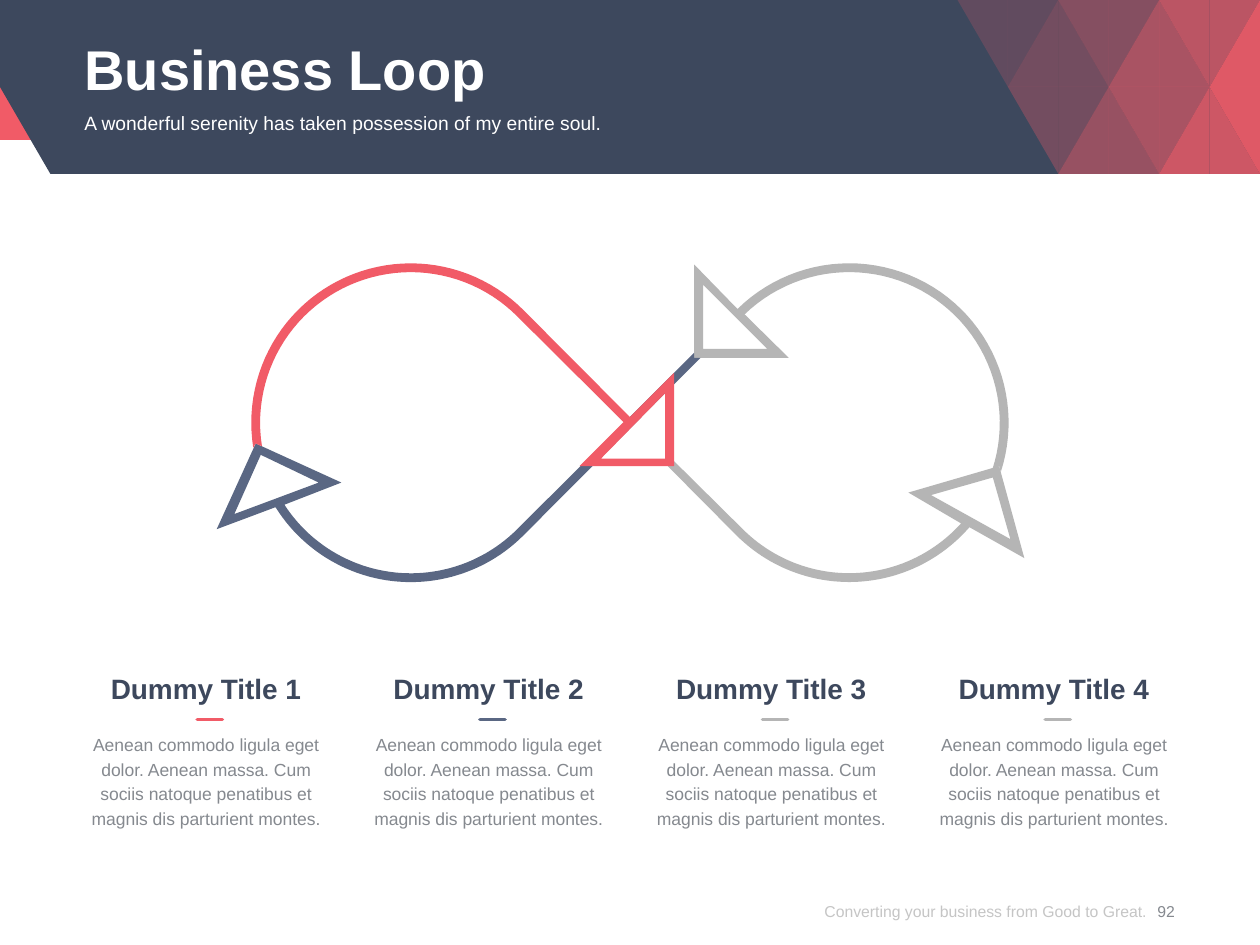
from dataclasses import dataclass
from math import cos, radians, sin

from lxml import etree
from pptx import Presentation
from pptx.dml.color import RGBColor
from pptx.enum.shapes import MSO_CONNECTOR, MSO_SHAPE
from pptx.enum.text import MSO_ANCHOR, MSO_AUTO_SIZE, PP_ALIGN
from pptx.oxml.ns import qn
from pptx.util import Inches, Pt

LEFT, CENTER, RIGHT = PP_ALIGN.LEFT, PP_ALIGN.CENTER, PP_ALIGN.RIGHT
TOP, MIDDLE = MSO_ANCHOR.TOP, MSO_ANCHOR.MIDDLE
NO_AUTOFIT = MSO_AUTO_SIZE.NONE
RECTANGLE, STRAIGHT = MSO_SHAPE.RECTANGLE, MSO_CONNECTOR.STRAIGHT

DESCRIPTION = (
    "Aenean commodo ligula eget dolor. Aenean massa. "
    "Cum sociis natoque penatibus et magnis dis parturient montes."
)
BAND_MIDDLE, BAND_BOTTOM = 0.69, 1.38
OUTER, INNER = 1.265, 1.195
LEFT_RING, RIGHT_RING = (3.26, 3.355), (6.74, 3.355)


@dataclass(frozen=True)
class Theme:
    font: str = "Arial"
    red: str = "F15B67"
    navy: str = "3D485D"
    blue: str = "5A6783"
    silver: str = "B5B5B5"
    gray: str = "85898F"
    footer: str = "8C8C8C"
    white: str = "FFFFFF"
    title_size: int = 32
    heading_size: int = 16
    subtitle_size: int = 11
    body_size: int = 10
    footer_size: int = 9


def set_alpha(fill, percent):
    for color in fill._xPr.iter(qn("a:srgbClr")):
        etree.SubElement(color, qn("a:alpha"), val=str(percent * 1000))


def arc(center, radius, start, end, steps=48):
    """Return points along a circle, with angles in degrees clockwise from the right."""
    angles = [radians(start + (end - start) * step / steps) for step in range(steps + 1)]
    return [(center[0] + radius * cos(angle), center[1] + radius * sin(angle)) for angle in angles]


def write(frame, text, *, size, color, font, bold=False, align=LEFT, anchor=TOP,
          line_spacing=None, alpha=None):
    frame.margin_left = frame.margin_right = frame.margin_top = frame.margin_bottom = 0
    frame.word_wrap = True
    frame.auto_size = NO_AUTOFIT
    frame.vertical_anchor = anchor
    paragraph = frame.paragraphs[0]
    paragraph.alignment = align
    paragraph.space_before = Pt(0)
    if line_spacing:
        paragraph.line_spacing = Pt(line_spacing)
    run = paragraph.add_run()
    run.text = text
    run.font.name, run.font.size, run.font.bold = font, Pt(size), bold
    run.font.fill.solid()
    run.font.fill.fore_color.rgb = RGBColor.from_string(color)
    if alpha:
        set_alpha(run.font.fill, alpha)


class SlideBuilder:
    """Draws themed elements on the current slide."""

    def __init__(self, slide, theme):
        self.slide, self.shapes, self.theme = slide, slide.shapes, theme

    def paint(self, shape, color, alpha=None):
        shape.shadow.inherit = False
        shape.line.fill.background()
        shape.fill.solid()
        shape.fill.fore_color.rgb = RGBColor.from_string(color)
        if alpha:
            set_alpha(shape.fill, alpha)

    def rectangle(self, left, top, width, height, color):
        shape = self.shapes.add_shape(
            RECTANGLE, Inches(left), Inches(top), Inches(width), Inches(height))
        self.paint(shape, color)

    def outline(self, color, *contours, alpha=None):
        builder = None
        for contour in contours:
            start, *others = [(Inches(x), Inches(y)) for x, y in contour]
            if builder is None:
                builder = self.shapes.build_freeform(*start)
            else:
                builder.move_to(*start)
            builder.add_line_segments(others)
        self.paint(builder.convert_to_shape(), color, alpha)

    def rule(self, left, top, right, color):
        line = self.shapes.add_connector(
            STRAIGHT, Inches(left), Inches(top), Inches(right), Inches(top))
        line.line.width = Pt(2)
        line.line.color.rgb = RGBColor.from_string(color)
        line.line._get_or_add_ln().set("cap", "rnd")
        etree.SubElement(line._element.spPr, qn("a:effectLst"))

    def text(self, text, left, top, width, height, **style):
        box = self.shapes.add_textbox(Inches(left), Inches(top), Inches(width), Inches(height))
        write(box.text_frame, text, font=self.theme.font, **style)

    def placeholder(self, index, text, left, top, width, height, **style):
        shape = self.slide.placeholders[index]
        shape.left, shape.top = Inches(left), Inches(top)
        shape.width, shape.height = Inches(width), Inches(height)
        write(shape.text_frame, text, font=self.theme.font, **style)
        properties = shape.text_frame.paragraphs[0]._p.get_or_add_pPr()
        properties.set("marL", "0")
        properties.set("indent", "0")
        etree.SubElement(properties, qn("a:buNone"))
        self.shapes._spTree.append(shape._element)


def draw_header(builder):
    theme = builder.theme
    builder.rectangle(0, 0, 10, 1.11, theme.red)
    builder.outline(theme.navy, [
        (0, 0), (10, 0), (10, BAND_BOTTOM), (0.4, BAND_BOTTOM), (0, BAND_MIDDLE)])
    half = 0.4
    rows = ((0, 1, (20, 30, 40, 60, 70, 90)), (BAND_BOTTOM, 2, (30, 50, 60, 80, 90)))
    for edge, first, alphas in rows:
        for column, alpha in enumerate(alphas, first):
            center = 10 - half * (6 - column)
            apex, base = (BAND_MIDDLE, edge) if column % 2 else (edge, BAND_MIDDLE)
            for side in (-half, half):
                if center + side <= 10:
                    builder.outline(
                        theme.red, [(center, apex), (center, base), (center + side, base)],
                        alpha=alpha)
    builder.placeholder(0, "Business Loop", 0.67, 0.19, 8.66, 0.65, size=theme.title_size,
                        color=theme.white, bold=True, anchor=MIDDLE, line_spacing=42)
    builder.placeholder(1, "A wonderful serenity has taken possession of my entire soul.",
                        0.67, 0.88, 8.66, 0.39, size=theme.subtitle_size, color=theme.white)


def draw_loop(builder):
    theme = builder.theme
    builder.outline(
        theme.silver,
        [(7.93, 3.7), (7.21, 3.91), *arc(RIGHT_RING, INNER, 42, 135), (5.35, 3.66), (5.35, 3.7),
         (5.3, 3.7), *arc(RIGHT_RING, OUTER, 135, 41), (8.13, 4.43)],
        [(7.39, 3.93), (7.88, 3.79), (8.02, 4.28)])
    builder.outline(
        theme.silver,
        [*arc(RIGHT_RING, OUTER, 18, -134.5), (5.51, 2.1), (5.51, 2.84), (6.26, 2.84),
         *arc(RIGHT_RING, INNER, -134, 18), (7.93, 3.7)],
        [(6.09, 2.77), (5.58, 2.77), (5.58, 2.26)])
    builder.outline(
        theme.blue,
        [(5.51, 2.84), (5.51, 2.8), *arc(LEFT_RING, INNER, 45, 147), (2.71, 3.83), (2.03, 3.52),
         (1.72, 4.2), *arc(LEFT_RING, OUTER, 148, 45), (5.56, 2.84)],
        [(1.86, 4.08), (2.07, 3.61), (2.53, 3.83)])
    builder.outline(
        theme.red,
        [(5, 3.31), *arc(LEFT_RING, OUTER, -45, -189), (2.03, 3.52),
         *arc(LEFT_RING, INNER, -189, -45), (4.95, 3.35), (4.6, 3.7), (5.35, 3.7), (5.35, 2.96)],
        [(5.28, 3.64), (4.77, 3.64), (5.28, 3.12)])


def draw_columns(builder):
    theme = builder.theme
    width = 1.93
    pitch = (8.66 - width) / 3
    for index, color in enumerate((theme.red, theme.blue, theme.silver, theme.silver)):
        left = 0.67 + index * pitch
        center = left + width / 2 + 0.03
        builder.text(f"Dummy Title {index + 1}", left, 5.33, width, 0.27,
                     size=theme.heading_size, color=theme.navy, bold=True, align=CENTER)
        builder.rule(center - 0.1, 5.71, center + 0.1, color)
        builder.text(DESCRIPTION, left, 5.8, width, 0.79, size=theme.body_size,
                     color=theme.gray, align=CENTER, line_spacing=14)


def draw_footer(builder):
    theme = builder.theme
    builder.text("Converting your business from Good to Great.", 6.04, 6.96, 3.06, 0.54,
                 size=theme.footer_size, color=theme.footer, alpha=50, align=RIGHT, anchor=MIDDLE)
    builder.text("92", 9.02, 6.96, 0.47, 0.54, size=theme.footer_size, color=theme.gray,
                 align=CENTER, anchor=MIDDLE)


def main():
    presentation = Presentation()
    presentation.slide_width, presentation.slide_height = Inches(10), Inches(7.5)
    slide = presentation.slides.add_slide(presentation.slide_layouts[1])
    builder = SlideBuilder(slide, Theme())
    draw_header(builder)
    draw_loop(builder)
    draw_columns(builder)
    draw_footer(builder)
    presentation.save("out.pptx")


if __name__ == "__main__":
    main()
